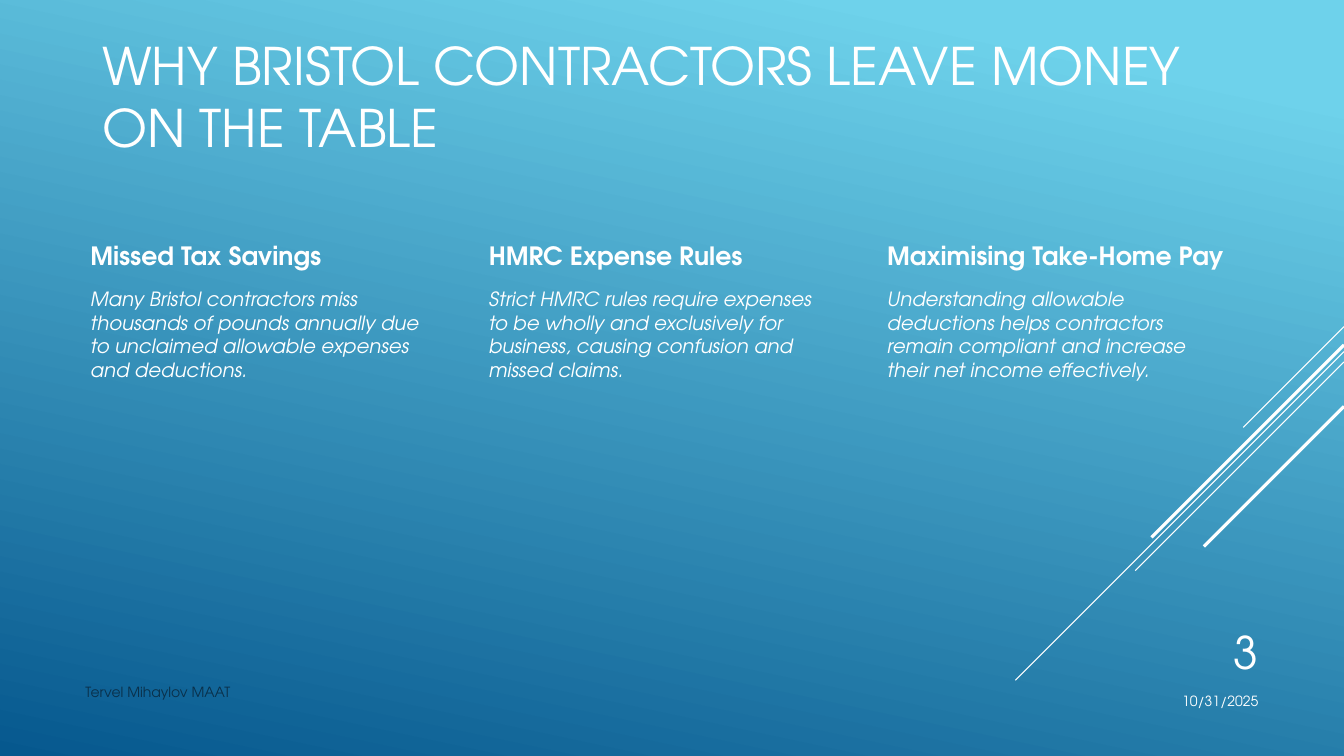
from dataclasses import dataclass

from lxml import etree
from pptx import Presentation
from pptx.dml.color import RGBColor
from pptx.enum.text import MSO_ANCHOR, MSO_AUTO_SIZE, MSO_VERTICAL_ANCHOR, PP_ALIGN
from pptx.enum.shapes import MSO_CONNECTOR
from pptx.oxml.ns import qn
from pptx.util import Cm, Pt

TOP, MID, LOW = MSO_ANCHOR.TOP, MSO_VERTICAL_ANCHOR.MIDDLE, MSO_ANCHOR.BOTTOM
LEFT, RIGHT = PP_ALIGN.LEFT, PP_ALIGN.RIGHT
STRAIGHT = MSO_CONNECTOR.STRAIGHT
NO_FIT = MSO_AUTO_SIZE.NONE
WIDE, HIGH = 33.87, 19.05


@dataclass(frozen=True)
class Theme:
    font: str = "TeX Gyre Adventor"
    white: str = "FFFFFF"
    navy: str = "0A304A"
    sky: str = "6ED2EB"
    sea: str = "06588E"
    title: int = 37
    number: int = 32
    head: int = 18
    body: int = 14
    small: int = 10


class Deck:
    def __init__(self, theme):
        self.theme = theme
        self.file = Presentation()
        self.file.slide_width, self.file.slide_height = Cm(WIDE), Cm(HIGH)
        self.slide = self.file.slides.add_slide(self.file.slide_layouts[5])

    def backdrop(self, angle):
        fill = self.slide.background.fill
        fill.gradient()
        fill.gradient_angle = angle
        stops = zip(fill.gradient_stops, (0.1, 1), (self.theme.sky, self.theme.sea))
        for stop, place, color in stops:
            stop.position = place
            stop.color.rgb = RGBColor.from_string(color)

    def ray(self, top, span, weight):
        """Draw a 45-degree line down and left from the right edge."""
        line = self.slide.shapes.add_connector(
            STRAIGHT, Cm(WIDE), Cm(top), Cm(WIDE - span), Cm(top + span))
        line.line.color.rgb = RGBColor.from_string(self.theme.white)
        line.line.width = Pt(weight)
        etree.SubElement(line._element.spPr, qn("a:effectLst"))

    def style(self, shape, words, size, color=None, anchor=TOP, align=LEFT,
              inset=(0.25, 0.13, 0.25, 0.13), bold=False, italic=False):
        frame = shape.text_frame
        frame.text = words
        frame.word_wrap = True
        frame.auto_size = NO_FIT
        frame.vertical_anchor = anchor
        (frame.margin_left, frame.margin_top,
         frame.margin_right, frame.margin_bottom) = map(Cm, inset)
        line = frame.paragraphs[0]
        line.alignment = align
        font = line.runs[0].font
        font.name, font.size = self.theme.font, Pt(size)
        font.bold, font.italic = bold, italic
        font.color.rgb = RGBColor.from_string(color or self.theme.white)

    def title(self, words, left, top, width, height):
        shape = self.slide.shapes.title
        shape.left, shape.top = Cm(left), Cm(top)
        shape.width, shape.height = Cm(width), Cm(height)
        self.style(shape, words, self.theme.title, anchor=LOW)

    def text(self, words, left, top, width, height, size, **look):
        box = self.slide.shapes.add_textbox(
            Cm(left), Cm(top), Cm(width), Cm(height))
        self.style(box, words, size, **look)

    def column(self, left, head, body):
        self.text(head, left, 5.97, 9.12, 1.19, self.theme.head,
                  inset=(0.38, 0.08, 0.08, 0.08), bold=True)
        self.text(body, left, 7.19, 9.12, 10.82, self.theme.body,
                  inset=(0.38, 0.05, 0.05, 0.05), italic=True)


RAYS = [(8.23, 2.54, 0.75), (8.86, 8.28, 0.75), (9.12, 5.26, 0.75),
        (8.69, 4.85, 2.25), (10.24, 3.53, 2.25)]

COLUMNS = [
    ("Missed Tax Savings",
     "Many Bristol contractors miss thousands of pounds annually due to "
     "unclaimed allowable expenses and deductions."),
    ("HMRC Expense Rules",
     "Strict HMRC rules require expenses to be wholly and exclusively for "
     "business, causing confusion and missed claims."),
    ("Maximising Take-Home Pay",
     "Understanding allowable deductions helps contractors remain compliant "
     "and increase their net income effectively."),
]


def main():
    theme = Theme()
    deck = Deck(theme)

    # Background and diagonal lines
    deck.backdrop(258)
    for ray in RAYS:
        deck.ray(*ray)

    # Title and three columns
    deck.title("WHY BRISTOL CONTRACTORS LEAVE MONEY ON THE TABLE",
               2.33, 1.02, 29.21, 3.1)
    for place, (head, body) in enumerate(COLUMNS):
        deck.column(1.9 + 10.04 * place, head, body)

    # Footer, date and slide number
    deck.text("Tervel Mihaylov MAAT", 1.9, 17.15, 20.96, 1.02, theme.small,
              color=theme.navy, inset=(0.25, 0.08, 0.25, 0.08))
    deck.text("10/31/2025", 27.51, 17.15, 4.45, 1.02, theme.small,
              anchor=MID, align=RIGHT)
    deck.text("3", 28.78, 15.49, 3.18, 1.85, theme.number,
              anchor=MID, align=RIGHT)

    deck.file.save("out.pptx")


if __name__ == "__main__":
    main()
